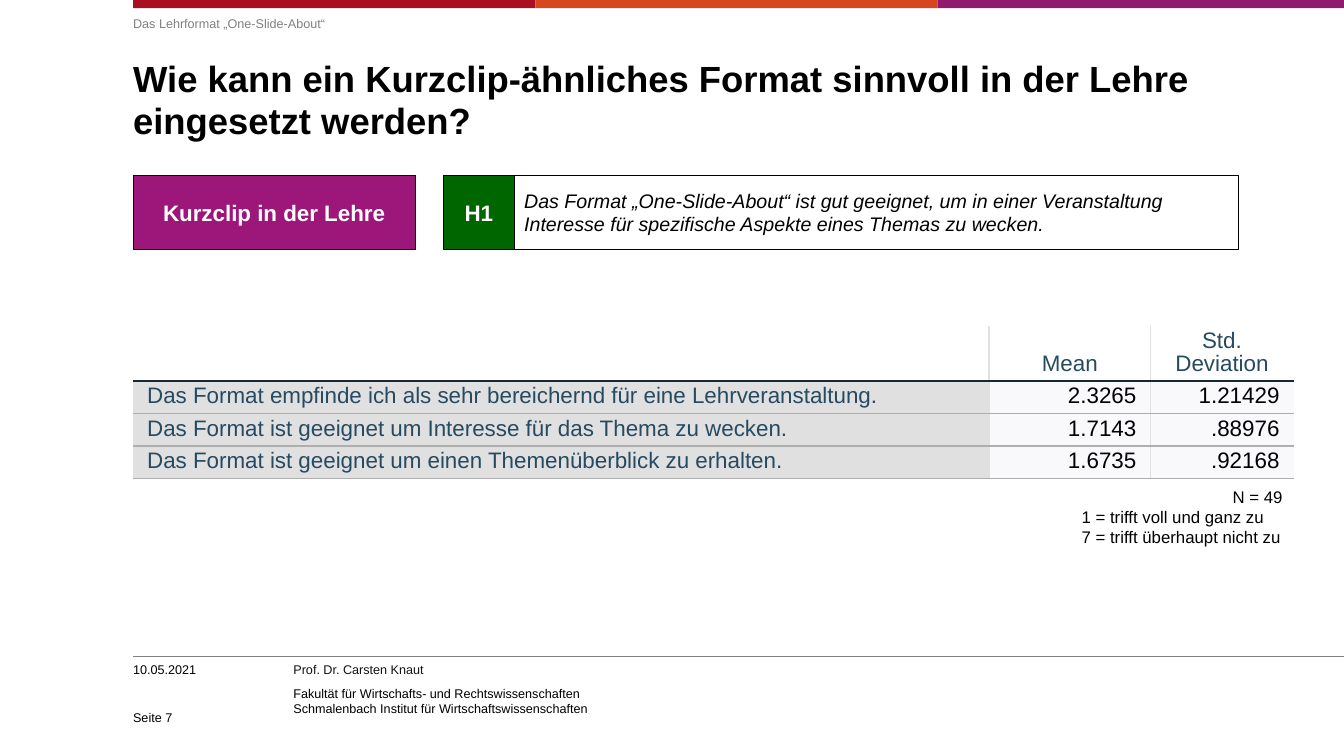
from lxml.etree import SubElement
from pptx import Presentation
from pptx.dml.color import RGBColor
from pptx.enum.shapes import MSO_CONNECTOR, MSO_SHAPE
from pptx.enum.text import MSO_ANCHOR, MSO_AUTO_SIZE, PP_ALIGN
from pptx.oxml.ns import qn
from pptx.util import Inches, Pt

BLACK = RGBColor(0x00, 0x00, 0x00)
WHITE = RGBColor(0xFF, 0xFF, 0xFF)
GRAY = RGBColor(0x80, 0x80, 0x80)
INK = RGBColor(0x14, 0x13, 0x13)
RED = RGBColor(0xAA, 0x0F, 0x1F)
ORANGE = RGBColor(0xD7, 0x47, 0x1F)
VIOLET = RGBColor(0x90, 0x1B, 0x6E)
PURPLE = RGBColor(0x9D, 0x16, 0x7A)
GREEN = RGBColor(0x00, 0x66, 0x00)
SLATE = RGBColor(0x26, 0x4A, 0x60)
NUMBER = RGBColor(0x01, 0x02, 0x05)
NAVY = RGBColor(0x15, 0x29, 0x35)
RULE = RGBColor(0xAE, 0xAE, 0xAE)
LIGHT = RGBColor(0xE0, 0xE0, 0xE0)
PALE = RGBColor(0xF9, 0xF9, 0xFB)

LEFT = 1.32


def add_run(p, text, size, color, bold=False, italic=False):
    r = p.add_run()
    r.text = text
    r.font.name = "Arial"
    r.font.size = Pt(size)
    r.font.color.rgb = color
    r.font.bold = bold
    r.font.italic = italic


def place(sp, x, y, w, h, margin=0):
    sp.left, sp.top, sp.width, sp.height = Inches(x), Inches(y), Inches(w), Inches(h)
    tf = sp.text_frame
    tf.word_wrap = True
    tf.auto_size = MSO_AUTO_SIZE.NONE
    tf.vertical_anchor = MSO_ANCHOR.TOP
    tf.margin_left = tf.margin_right = Inches(margin)
    tf.margin_top = tf.margin_bottom = Inches(margin / 2)
    return tf


prs = Presentation()
prs.slide_width = Inches(13.33)
prs.slide_height = Inches(7.5)
s = prs.slides.add_slide(prs.slide_layouts[1])

for x, w, color in [(LEFT, 3.99, RED), (5.31, 3.99, ORANGE), (9.3, 4.03, VIOLET)]:
    bar = s.shapes.add_shape(MSO_SHAPE.RECTANGLE, Inches(x), 0, Inches(w), Inches(0.08))
    bar.shadow.inherit = False
    bar.fill.solid()
    bar.fill.fore_color.rgb = color
    bar.line.fill.background()

rule = s.shapes.add_connector(
    MSO_CONNECTOR.STRAIGHT, Inches(LEFT), Inches(6.51), Inches(13.33), Inches(6.51))
rule.line.color.rgb = GRAY
rule.line.width = Pt(0.5)
SubElement(rule._element.spPr, qn("a:effectLst"))

tf = place(s.shapes.title, LEFT, 0.57, 11.81, 0.98)
p = tf.paragraphs[0]
p.alignment = PP_ALIGN.LEFT
p.line_spacing = Pt(30)
add_run(p, "Wie kann ein Kurzclip-ähnliches Format sinnvoll in der Lehre eingesetzt werden?",
        26, BLACK, bold=True)

tf = place(s.placeholders[1], LEFT, 0.16, 11.8, 0.24)
p = tf.paragraphs[0]
pPr = p._p.get_or_add_pPr()
pPr.set("marL", "0")
pPr.set("indent", "0")
SubElement(pPr, qn("a:buNone"))
p.space_before = Pt(0)
p.space_after = Pt(6)
add_run(p, "Das Lehrformat „One-Slide-About“", 9, GRAY)

for text, y, h, anchor in [("10.05.2021", 6.57, 0.2, MSO_ANCHOR.TOP),
                           ("Seite 7", 6.96, 0.23, MSO_ANCHOR.BOTTOM)]:
    tf = place(s.shapes.add_textbox(0, 0, 0, 0), LEFT, y, 1.42, h)
    tf.vertical_anchor = anchor
    add_run(tf.paragraphs[0], text, 9, BLACK)

tf = place(s.shapes.add_textbox(0, 0, 0, 0), 2.91, 6.57, 4.31, 0.6)
p = tf.paragraphs[0]
p.space_after = Pt(6)
add_run(p, "Prof. Dr. Carsten Knaut", 9, INK)
p = tf.add_paragraph()
p.space_after = Pt(6)
add_run(p, "Fakultät für Wirtschafts- und Rechtswissenschaften", 9, BLACK)
p.add_line_break()
add_run(p, "Schmalenbach Institut für Wirtschaftswissenschaften", 9, BLACK)

rows = [
    ("", "Mean", "Std. Deviation"),
    ("Das Format empfinde ich als sehr bereichernd für eine Lehrveranstaltung.",
     "2.3265", "1.21429"),
    ("Das Format ist geeignet um Interesse für das Thema zu wecken.", "1.7143", ".88976"),
    ("Das Format ist geeignet um einen Themenüberblick zu erhalten.", "1.6735", ".92168"),
]
widths = [8.49, 1.6, 1.42]
table = s.shapes.add_table(len(rows), len(widths), Inches(LEFT), Inches(3.23),
                           Inches(sum(widths)), Inches(1.52)).table
table.first_row = False
table.horz_banding = False
for col, w in zip(table.columns, widths):
    col.width = Inches(w)
for i, texts in enumerate(rows):
    table.rows[i].height = Inches(0.32 if i else 0.55)
    for j, text in enumerate(texts):
        cell = table.cell(i, j)
        cell.margin_left = cell.margin_right = Inches(0.14)
        cell.vertical_anchor = MSO_ANCHOR.TOP if i else MSO_ANCHOR.BOTTOM
        borders = {
            "a:lnL": LIGHT if j else None,
            "a:lnR": LIGHT if j < 2 else None,
            "a:lnT": (None, NAVY, RULE, RULE)[i],
            "a:lnB": RULE if i else NAVY,
        }
        for tag, color in borders.items():
            ln = SubElement(cell._tc.get_or_add_tcPr(), qn(tag), w=str(Pt(1)))
            if color is None:
                SubElement(ln, qn("a:noFill"))
            else:
                SubElement(SubElement(ln, qn("a:solidFill")), qn("a:srgbClr"), val=str(color))
        cell.fill.solid()
        cell.fill.fore_color.rgb = WHITE if i == 0 else PALE if j else LIGHT
        p = cell.text_frame.paragraphs[0]
        p.line_spacing = Pt(16)
        if j:
            p.alignment = PP_ALIGN.RIGHT if i else PP_ALIGN.CENTER
        if text:
            add_run(p, text, 16, NUMBER if i and j else SLATE)

boxes = [
    (LEFT, 2.8, PURPLE, "Kurzclip in der Lehre"),
    (5.1, 7.18, WHITE, "Das Format „One-Slide-About“ ist gut geeignet, um in einer Veranstaltung "
                       "Interesse für spezifische Aspekte eines Themas zu wecken."),
    (4.4, 0.7, GREEN, "H1"),
]
for x, w, fill, text in boxes:
    box = s.shapes.add_shape(MSO_SHAPE.RECTANGLE, 0, 0, 0, 0)
    box.shadow.inherit = False
    box.fill.solid()
    box.fill.fore_color.rgb = fill
    box.line.color.rgb = BLACK
    box.line.width = Pt(0.5)
    tf = place(box, x, 1.74, w, 0.73, 0.1)
    tf.vertical_anchor = MSO_ANCHOR.MIDDLE
    p = tf.paragraphs[0]
    if fill == WHITE:
        p.alignment = PP_ALIGN.LEFT
        add_run(p, text, 14, BLACK, italic=True)
    else:
        p.alignment = PP_ALIGN.CENTER
        add_run(p, text, 16, WHITE, bold=True)

tf = place(s.shapes.add_textbox(0, 0, 0, 0), 10.63, 4.78, 2.19, 0.71, 0.1)
tf.word_wrap = False
p = tf.paragraphs[0]
p.alignment = PP_ALIGN.RIGHT
add_run(p, "N = 49", 12, BLACK)
for text in ["1 = trifft voll und ganz zu", "7 = trifft überhaupt nicht zu"]:
    add_run(tf.add_paragraph(), text, 12, BLACK)

prs.save("out.pptx")
